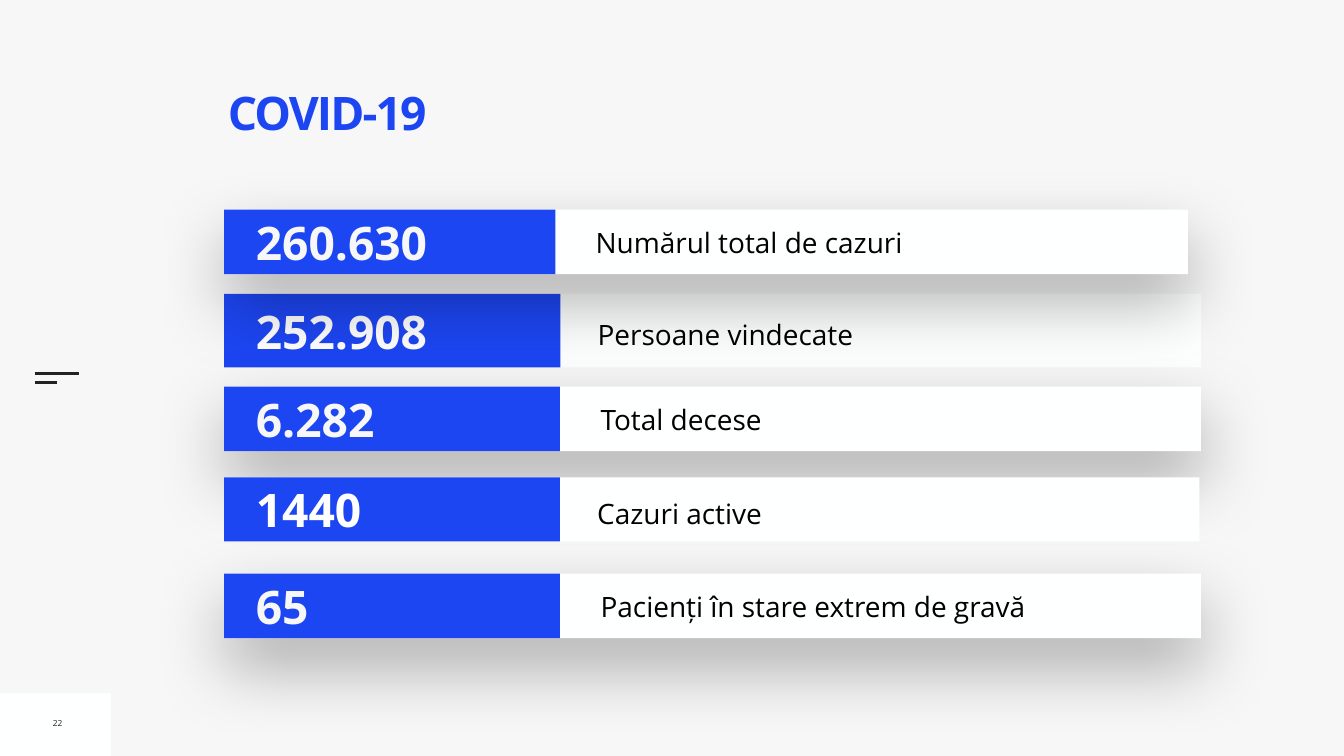
import pptx
import pptx.dml.color
import pptx.enum.shapes
import pptx.enum.text
import pptx.oxml
import pptx.oxml.ns
import pptx.util
from pptx.dml.color import RGBColor
from pptx.util import Inches

BLUE = RGBColor(0x1D, 0x46, 0xF3)
PAPER = RGBColor(0xF7, 0xF7, 0xF7)
PANEL = RGBColor(0xFE, 0xFF, 0xFF)
WHITE = RGBColor(0xFF, 0xFF, 0xFF)
INK = RGBColor(0x22, 0x22, 0x22)
BLACK = RGBColor(0, 0, 0)
FONT = "Open Sans"
ROW_LEFT = 4.45

STATISTICS = [
    dict(number="252.908", label="Persoane vindecate", top=5.83, width=19.38,
         height=1.46, number_width=6.67, label_left=7.41, raised=False),
    dict(number="260.630", label="Numărul total de cazuri", top=4.16, width=19.12,
         height=1.28, number_width=6.57, label_left=7.27, raised=True),
    dict(number="6.282", label="Total decese", top=7.67, width=19.38,
         height=1.28, number_width=6.66, label_left=7.37, raised=True),
    dict(number="65", label="Pacienți în stare extrem de gravă", top=11.38, width=19.38,
         height=1.28, number_width=6.66, label_left=7.37, raised=True),
    dict(number="1440", label="Cazuri active", top=9.47, width=19.35,
         height=1.27, number_width=6.66, label_left=7.4, raised=False),
]


def add_effects(shape, content=""):
    shape._element.spPr.append(pptx.oxml.parse_xml(
        f'<a:effectLst {pptx.oxml.ns.nsdecls("a")}>{content}</a:effectLst>'))


def add_panel(shapes, left, top, width, height, color, raised=False):
    panel = shapes.add_shape(
        pptx.enum.shapes.MSO_SHAPE.RECTANGLE,
        Inches(left), Inches(top), Inches(width), Inches(height))
    panel.fill.solid()
    panel.fill.fore_color.rgb = color
    panel.line.fill.background()
    if raised:
        add_effects(panel, (
            f'<a:outerShdw blurRad="{pptx.util.Pt(100)}" dist="{pptx.util.Pt(40)}" '
            'dir="5400000" rotWithShape="0"><a:srgbClr val="000000">'
            '<a:alpha val="30000"/></a:srgbClr></a:outerShdw>'))
    else:
        panel.shadow.inherit = False


def add_text(shapes, left, top, width, height, text, size, color, bold=False,
             inset=0.1, anchor="MIDDLE", spacing=None, align=None, wrap=True):
    box = shapes.add_textbox(Inches(left), Inches(top), Inches(width), Inches(height))
    frame = box.text_frame
    frame_format = {
        "word_wrap": wrap,
        "vertical_anchor": pptx.enum.text.MSO_ANCHOR[anchor],
        **{f"margin_{side}": Inches(inset) for side in ("left", "top", "right", "bottom")},
    }
    for name, value in frame_format.items():
        setattr(frame, name, value)
    paragraph = frame.paragraphs[0]
    paragraph.alignment = align
    paragraph.line_spacing = spacing
    run = paragraph.add_run()
    run.text = text
    font_format = {"name": FONT, "size": pptx.util.Pt(size), "bold": bold}
    for name, value in font_format.items():
        setattr(run.font, name, value)
    run.font.color.rgb = color
    return run


def add_title(slide, left, top, width, height):
    title = add_text(slide.shapes, left, top, width, height, "COVID-19", 66, BLUE,
                     bold=True, inset=0, anchor="TOP", spacing=0.8)
    title.font._element.set("spc", "-270")


def add_menu_mark(slide, left, top, width, gap):
    for index, length in enumerate((width, width / 2)):
        y = Inches(top + index * gap)
        stroke = slide.shapes.add_connector(
            pptx.enum.shapes.MSO_CONNECTOR.STRAIGHT,
            Inches(left), y, Inches(left + length), y)
        stroke.line.color.rgb = INK
        stroke.line.width = pptx.util.Pt(3)
        add_effects(stroke)


def add_page_number(slide, left, top, width, height):
    add_panel(slide.shapes, left, top, width, height, PANEL)
    add_text(slide.shapes, left + 0.95, top + 0.38, 0.39, 0.4, "22", 12, INK,
             align=pptx.enum.text.PP_ALIGN.CENTER, wrap=False)


def add_statistic(slide, left, top, width, height, number, label,
                  number_width, label_left, raised):
    shapes = slide.shapes.add_group_shape().shapes
    middle = top + height / 2
    label_format = (
        dict(height=0.88, gap=0.24, lift=0, inset=0.1, spacing=None) if raised
        else dict(height=0.78, gap=0.38, lift=0.03, inset=0, spacing=1.3))
    label_height = label_format["height"]
    add_panel(shapes, left, top, width, height, PANEL, raised)
    add_text(shapes, left + label_left, middle - label_height / 2 - label_format["lift"],
             width - label_left - label_format["gap"], label_height, label, 40, BLACK,
             inset=label_format["inset"], spacing=label_format["spacing"])
    add_panel(shapes, left, top, number_width, height, BLUE)
    add_text(shapes, left + 0.53, middle - 0.655, number_width - 0.62, 1.31,
             number, 66, PAPER if raised else WHITE, bold=True)


def main():
    presentation = pptx.Presentation()
    presentation.slide_width = Inches(26.67)
    presentation.slide_height = Inches(15)
    slide = presentation.slides.add_slide(presentation.slide_layouts[6])
    slide.background.fill.solid()
    slide.background.fill.fore_color.rgb = PAPER
    add_page_number(slide, 0, 13.76, 2.2, 1.24)
    add_menu_mark(slide, 0.69, 7.41, 0.88, 0.18)
    add_title(slide, 4.52, 1.88, 13.01, 2.73)
    for statistic in STATISTICS:
        add_statistic(slide, ROW_LEFT, **statistic)
    presentation.save("out.pptx")


if __name__ == "__main__":
    main()
